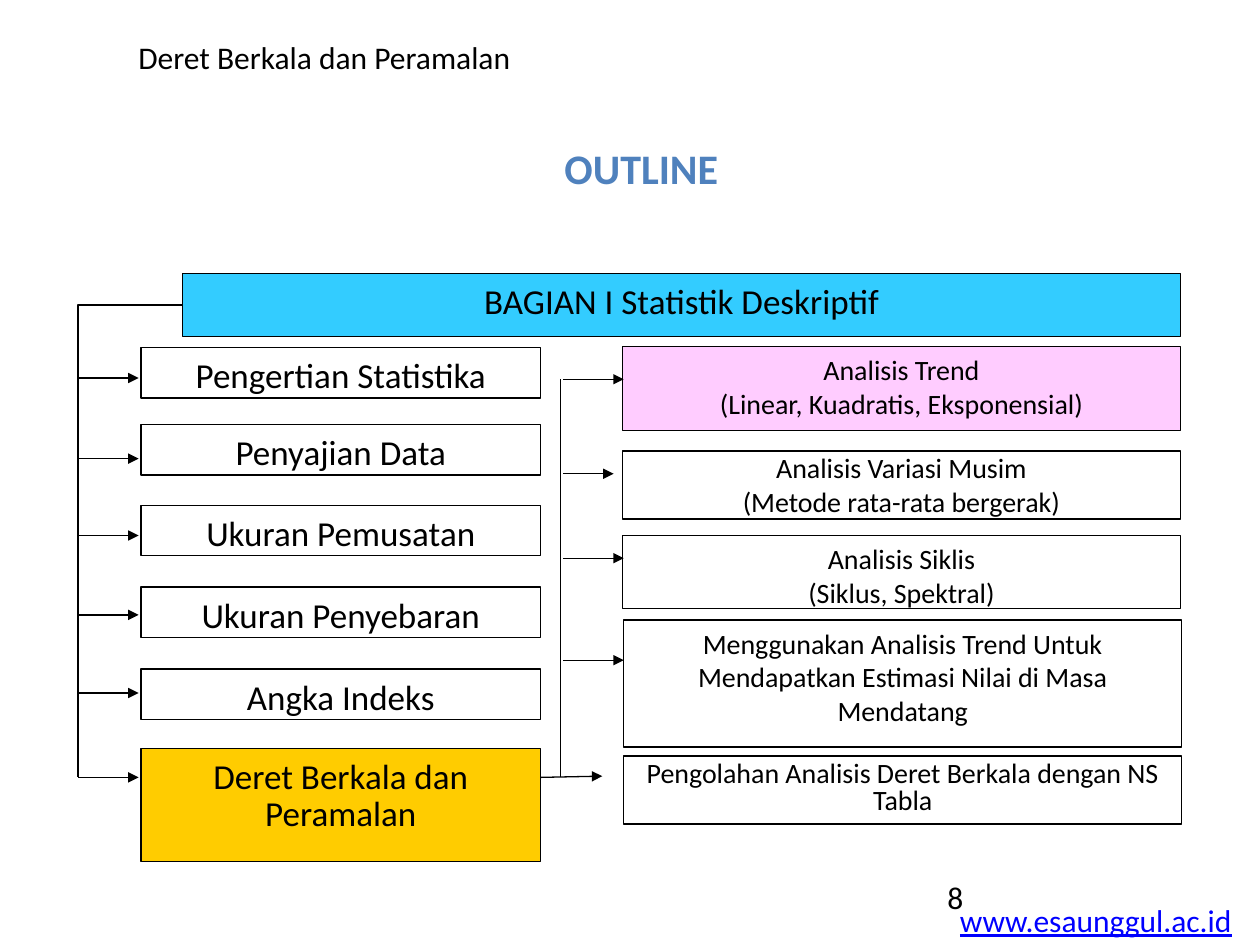
from lxml import etree
from pptx import Presentation
from pptx.dml.color import RGBColor
from pptx.enum.shapes import MSO_CONNECTOR, MSO_SHAPE
from pptx.enum.text import MSO_ANCHOR, PP_ALIGN
from pptx.oxml.ns import qn
from pptx.util import Inches, Pt

RECT, LINE = MSO_SHAPE.RECTANGLE, MSO_CONNECTOR.STRAIGHT
TOP, MIDDLE = MSO_ANCHOR.TOP, MSO_ANCHOR.MIDDLE
LEFT, CENTER = PP_ALIGN.LEFT, PP_ALIGN.CENTER

BLACK = RGBColor(0x00, 0x00, 0x00)
WHITE = RGBColor(0xFF, 0xFF, 0xFF)
BLUE = RGBColor(0x4F, 0x81, 0xBD)
LINK = RGBColor(0x00, 0x00, 0xFF)
CYAN = RGBColor(0x33, 0xCC, 0xFF)
GOLD = RGBColor(0xFF, 0xCC, 0x00)
PINK = RGBColor(0xFF, 0xCC, 0xFF)

COLS, ROWS = 100, 75
FONT = "Calibri"


class Deck:
    """Slide style, with positions in grid columns and rows."""

    def __init__(self):
        self.prs = Presentation()
        self.prs.slide_width, self.prs.slide_height = Inches(10), Inches(7.5)
        self.slide = self.prs.slides.add_slide(self.prs.slide_layouts[5])
        self.shapes = self.slide.shapes

    def x(self, col):
        return round(self.prs.slide_width * col / COLS)

    def y(self, row):
        return round(self.prs.slide_height * row / ROWS)

    def area(self, col, row, wide, high):
        return self.x(col), self.y(row), self.x(wide), self.y(high)

    def words(self, shape, lines, align=CENTER, anchor=TOP, wrap=True, **font):
        """Fill a shape with lines, each one a (text, line spacing) pair."""
        frame = shape.text_frame
        frame.word_wrap, frame.vertical_anchor = wrap, anchor
        style = {"name": FONT, "size": Pt(18), "bold": False, **font}
        color = style.pop("color", BLACK)
        for i, (text, space) in enumerate(lines):
            para = frame.add_paragraph() if i else frame.paragraphs[0]
            para.alignment, para.line_spacing = align, space
            run = para.add_run()
            run.text = text
            run.font.color.rgb = color
            for key, value in style.items():
                setattr(run.font, key, value)

    def title(self, text, *area, **font):
        shape = self.shapes.title
        shape.left, shape.top, shape.width, shape.height = self.area(*area)
        self.words(shape, [(text, 1)], anchor=MIDDLE, **font)

    def label(self, text, *area, **form):
        shape = self.shapes.add_textbox(*self.area(*area))
        self.words(shape, [(text, 1)], align=LEFT, **form)

    def ink(self, shape):
        shape.line.color.rgb, shape.line.width = BLACK, Pt(0.75)

    def box(self, lines, area, fill, size):
        shape = self.shapes.add_shape(RECT, *self.area(*area))
        shape.shadow.inherit = False
        if fill is None:
            shape.fill.background()
        else:
            shape.fill.solid()
            shape.fill.fore_color.rgb = fill
        self.ink(shape)
        self.words(shape, lines, size=Pt(size))

    def line(self, x1, y1, x2, y2, head=True):
        link = self.shapes.add_connector(
            LINE, self.x(x1), self.y(y1), self.x(x2), self.y(y2))
        self.ink(link)
        props = link.element.spPr
        if head:
            tail = etree.SubElement(props.find(qn("a:ln")), qn("a:tailEnd"))
            tail.set("type", "triangle")
        etree.SubElement(props, qn("a:effectLst"))

    def bend(self, first, *rest):
        pen = self.shapes.build_freeform(self.x(first[0]), self.y(first[1]))
        pen.add_line_segments(
            [(self.x(col), self.y(row)) for col, row in rest], close=False)
        shape = pen.convert_to_shape()
        shape.shadow.inherit = False
        shape.fill.background()
        self.ink(shape)


def main():
    deck = Deck()

    # Footer, page number and title
    deck.label("www.esaunggul.ac.id", 75.2, 71, 23.8, 4,
               wrap=False, color=LINK, underline=True)
    deck.label("8", 74.2, 69.2, 20.8, 5)
    deck.title("OUTLINE", 8.3, 10.8, 85.2, 5.1,
               size=Pt(24), bold=True, color=BLUE)

    # Banner and the bracket that leads to the chapters
    deck.box([("BAGIAN I Statistik Deskriptif", 1)],
             (14.5, 21.7, 79.2, 5), CYAN, 20)
    deck.bend((14.5, 24.2), (6.2, 24.2), (6.2, 61.7))

    # Chapters: box top, height, arrow row, fill, lines
    chapters = [
        (27.6, 4, 30, None, [("Pengertian Statistika", 1)]),
        (33.7, 4, 36.4, None, [("Penyajian Data", 1)]),
        (40.1, 4, 42.5, WHITE, [("Ukuran Pemusatan", 1)]),
        (46.6, 4, 48.8, WHITE, [("Ukuran Penyebaran", 1)]),
        (53.1, 4, 55, None, [("Angka Indeks", 1)]),
        (59.4, 9, 61.7, GOLD,
         [("Deret Berkala dan", 1), ("Peramalan", 0.9)]),
    ]
    for top, high, row, fill, lines in chapters:
        deck.box(lines, (11.2, top, 31.7, high), fill, 20)
        deck.line(6.2, row, 11, row)

    # Topics of the last chapter: box left, top, height, fill, lines
    topics = [
        (49.4, 27.5, 6.7, PINK,
         [("Analisis Trend", 1), ("(Linear, Kuadratis, Eksponensial)", 1)]),
        (49.4, 35.8, 5.4, WHITE,
         [("Analisis Variasi Musim", 0.8), ("(Metode rata-rata bergerak)", 1)]),
        (49.4, 42.5, 5.8, WHITE,
         [("Analisis Siklis", 1), ("(Siklus, Spektral)", 1)]),
        (49.5, 49.2, 10.1, WHITE,
         [("Menggunakan Analisis Trend Untuk Mendapatkan "
           "Estimasi Nilai di Masa Mendatang", 1)]),
        (49.5, 60, 5.4, WHITE,
         [("Pengolahan Analisis Deret Berkala dengan NS Tabla", 0.8)]),
    ]
    for left, top, high, fill, lines in topics:
        deck.box(lines, (left, top, 44.3, high), fill, 16)

    # Trunk and arrows to the topics
    deck.line(44.5, 30.1, 44.5, 61.7, head=False)
    for row, end in [(30.1, 49.5), (37.6, 48.7), (44.3, 49.5), (52.4, 49.5)]:
        deck.line(44.7, row, end, row)
    deck.line(42.9, 61.7, 47.8, 61.6)

    # Chapter name at the top
    deck.label("Deret Berkala dan Peramalan", 10, 2.5, 79.2, 4)

    deck.prs.save("out.pptx")


if __name__ == "__main__":
    main()
